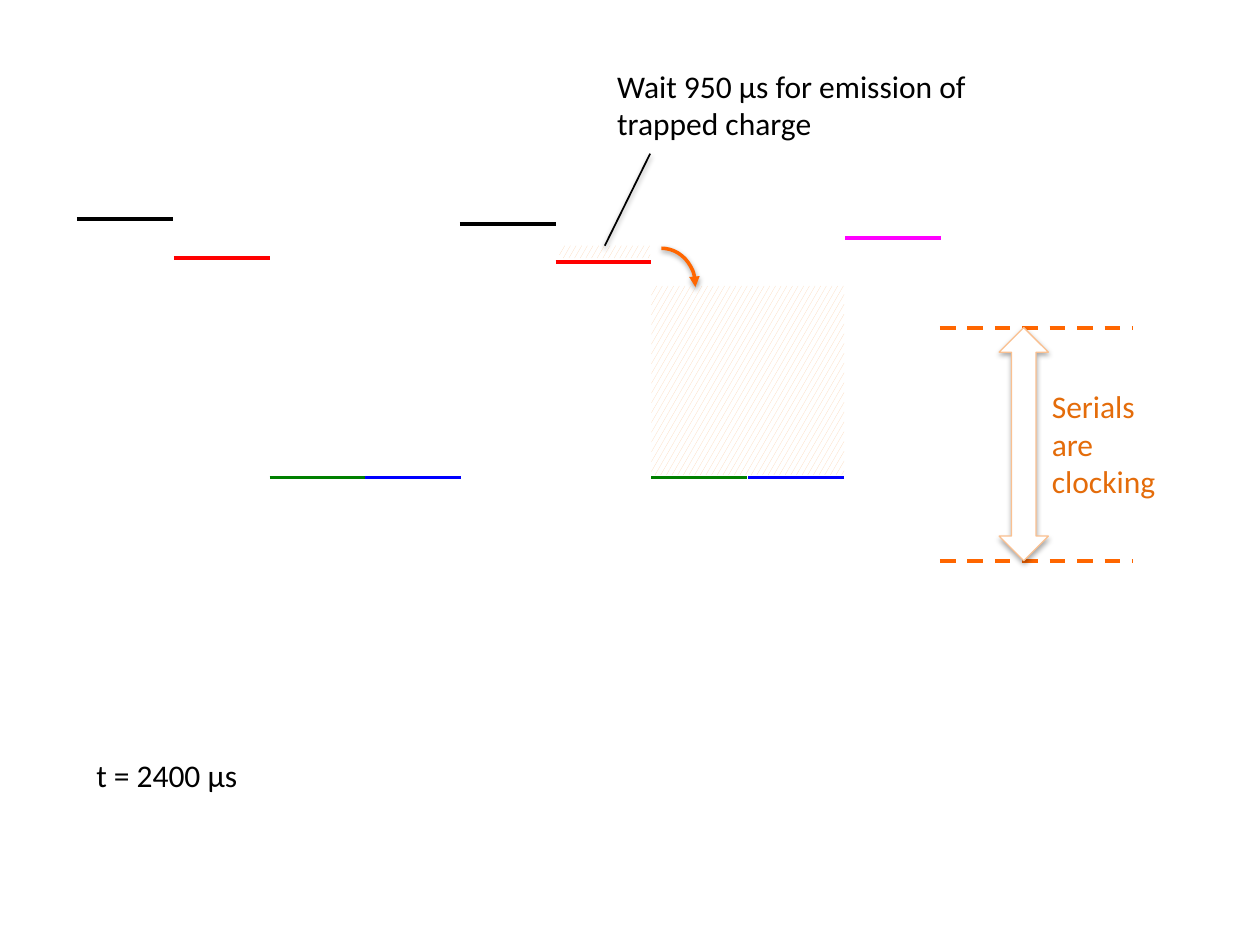
"""Build the slide of clock levels while trapped charge is emitted."""
from lxml.etree import SubElement
from pptx import Presentation
from pptx.dml.color import RGBColor
from pptx.enum.dml import MSO_LINE, MSO_PATTERN
from pptx.enum.shapes import MSO_CONNECTOR, MSO_SHAPE
from pptx.enum.text import MSO_AUTO_SIZE
from pptx.oxml.ns import qn
from pptx.util import Inches, Pt

COLORS = {
    "black": "000000", "red": "FF0000", "green": "008000", "blue": "0000FF",
    "magenta": "FF00FF", "orange": "FF6600", "label": "E46C0A",
    "peach": "FCD5B5", "outline": "FAC090", "white": "FFFFFF",
}
COLORS = {name: RGBColor.from_string(value) for name, value in COLORS.items()}


def set_shadow(shape, distance=0, opacity=0):
    """Give the shape a downward shadow, or none when opacity is zero."""
    effects = SubElement(shape._element.spPr, qn("a:effectLst"))
    if opacity:
        shadow = SubElement(effects, qn("a:outerShdw"), blurRad=str(Pt(3.1)),
                            dist=str(Pt(distance)), dir="5400000", rotWithShape="0")
        color = SubElement(shadow, qn("a:srgbClr"), val=str(COLORS["black"]))
        SubElement(color, qn("a:alpha"), val=str(opacity * 1000))


def add_line(start, end, color, width=2.25):
    """Draw a straight line between two points in inches."""
    line = slide.shapes.add_connector(
        MSO_CONNECTOR.STRAIGHT, *(Inches(value) for value in (*start, *end)))
    line.line.color.rgb = COLORS[color]
    line.line.width = Pt(width)
    return line


presentation = Presentation()
presentation.slide_width, presentation.slide_height = Inches(10), Inches(7.5)
slide = presentation.slides.add_slide(presentation.slide_layouts[6])

for box in ((5.17, 2.27, 1.53, 1.5), (4.44, 1.95, 0.72, 0.1)):
    charge = slide.shapes.add_shape(MSO_SHAPE.RECTANGLE, *(Inches(value) for value in box))
    charge.fill.patterned()
    charge.fill.pattern = MSO_PATTERN.LARGE_CONFETTI
    charge.fill.fore_color.rgb = COLORS["peach"]
    charge.fill.back_color.rgb = COLORS["white"]
    charge.line.fill.background()
    set_shadow(charge)

step = 0.76
levels = [
    ("black", 0.61, 1.74), ("black", 3.65, 1.78),
    ("red", 1.38, 2.05), ("red", 4.41, 2.08),
    ("green", 2.14, 3.79), ("green", 5.17, 3.79),
    ("blue", 2.9, 3.79), ("blue", 5.94, 3.79),
    ("magenta", 6.71, 1.89),
]
for color, left, top in levels:
    set_shadow(add_line((left, top), (left + step, top), color))

for top in (4.45, 2.6):
    serial_level = add_line((7.46, top), (8.99, top), "orange")
    serial_level.line.dash_style = MSO_LINE.DASH
    set_shadow(serial_level)

swing_arrow = slide.shapes.add_shape(
    MSO_SHAPE.UP_DOWN_ARROW, Inches(7.93), Inches(2.6), Inches(0.39), Inches(1.85))
swing_arrow.fill.solid()
swing_arrow.fill.fore_color.rgb = COLORS["white"]
swing_arrow.line.color.rgb = COLORS["outline"]
swing_arrow.line.width = Pt(0.75)
set_shadow(swing_arrow, 1.8, 35)

transfer_arc = slide.shapes.add_shape(
    MSO_SHAPE.ARC, Inches(4.98), Inches(1.97), Inches(0.54), Inches(0.59))
transfer_arc.adjustments[0] = 162
transfer_arc.adjustments[1] = 1.653
transfer_arc.fill.background()
transfer_arc.line.color.rgb = COLORS["orange"]
transfer_arc.line.width = Pt(2)
SubElement(transfer_arc.line._get_or_add_ln(), qn("a:tailEnd"), type="triangle")
set_shadow(transfer_arc, 1.6, 38)

set_shadow(add_line((5.16, 1.22), (4.8, 1.95), "black", 1), 1.6, 38)

labels = [
    ("Serials are clocking", (8.25, 3.02, 1.23, 1.01), "label"),
    ("Wait 950 µs for emission of trapped charge", (4.8, 0.48, 3.13, 0.71), "black"),
    (" t = 2400 µs", (0.61, 5.95, 5, 0.4), "black"),
]
for text, box, color in labels:
    label = slide.shapes.add_textbox(*(Inches(value) for value in box))
    label.text_frame.word_wrap = True
    label.text_frame.auto_size = MSO_AUTO_SIZE.SHAPE_TO_FIT_TEXT
    label.text_frame.text = text
    font = label.text_frame.paragraphs[0].runs[0].font
    font.name = "Calibri"
    font.size = Pt(18)
    font.color.rgb = COLORS[color]

presentation.save("out.pptx")
